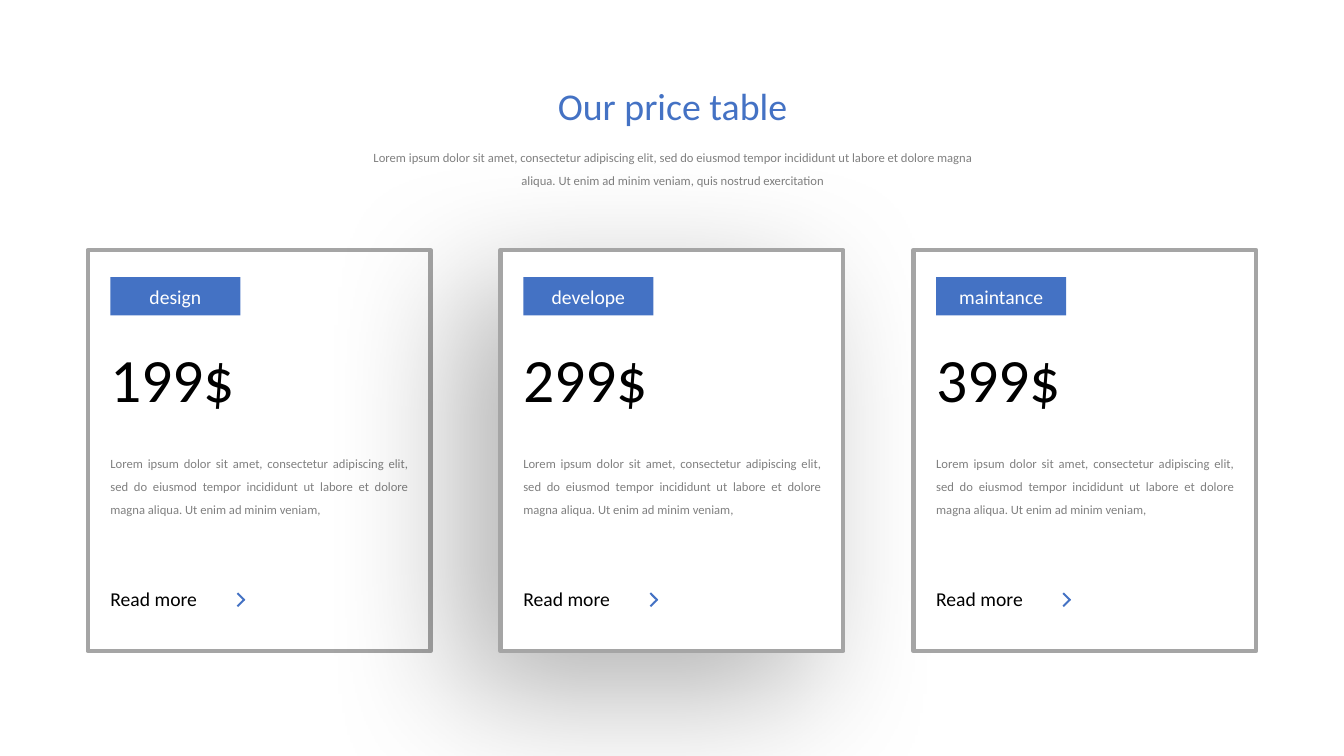
"""Build a price table slide with three framed cards."""
from lxml import etree
from pptx import Presentation
from pptx.dml.color import RGBColor
from pptx.enum.shapes import MSO_SHAPE
from pptx.enum.text import MSO_ANCHOR, PP_ALIGN
from pptx.oxml.ns import qn
from pptx.util import Inches, Pt

RECT = MSO_SHAPE.RECTANGLE
TOP, MIDDLE = MSO_ANCHOR.TOP, MSO_ANCHOR.MIDDLE
LEFT, CENTER, JUSTIFY = PP_ALIGN.LEFT, PP_ALIGN.CENTER, PP_ALIGN.JUSTIFY

TITLE = "Our price table"
LOREM = ("Lorem ipsum dolor sit amet, consectetur adipiscing elit, sed do eiusmod "
         "tempor incididunt ut labore et dolore magna aliqua. Ut enim ad minim veniam,")
INTRO = LOREM + " quis nostrud exercitation"
PLANS = [("design", "199$"), ("develope", "299$"), ("maintance", "399$")]
MORE = "Read more"
FEATURED = 1

BLUE, GRAY, FRAME, WHITE, BLACK = "4472C4", "808080", "A5A5A5", "FFFFFF", "000000"
FONT = "Calibri"
SLIDE_W, SLIDE_H = 13.33, 7.5
MARGIN, CARD_TOP, CARD_W, CARD_H = 0.87, 2.48, 3.4, 3.98
PITCH = (SLIDE_W - 2 * MARGIN - CARD_W) / (len(PLANS) - 1)
PAD = 0.225


def rgb(value):
    return RGBColor.from_string(value)


def box(left, top, width, height):
    return [Inches(v) for v in (left, top, width, height)]


def write(s, text, size, color, align=LEFT, spacing=1.0, anchor=TOP, wrap=True):
    tf = s.text_frame
    tf.word_wrap = wrap
    tf.vertical_anchor = anchor
    tf.margin_left = tf.margin_top = tf.margin_right = tf.margin_bottom = 0
    p = tf.paragraphs[0]
    p.text = text
    p.alignment, p.line_spacing = align, spacing
    p.font.name, p.font.size = FONT, Pt(size)
    p.font.color.rgb = rgb(color)


def add_text(shapes, at, *args, **kwargs):
    write(shapes.add_textbox(*box(*at)), *args, **kwargs)


def add_rect(shapes, at, fill, line=None):
    s = shapes.add_shape(RECT, *box(*at))
    s.shadow.inherit = False
    s.fill.solid()
    s.fill.fore_color.rgb = rgb(fill)
    if line:
        s.line.color.rgb = rgb(line)
        s.line.width = Pt(3)
    else:
        s.line.fill.background()
    return s


def add_shadow(s):
    effects = s._element.spPr.find(qn("a:effectLst"))
    shadow = etree.SubElement(effects, qn("a:outerShdw"), blurRad=str(Pt(100)),
                              dist=str(Pt(40)), dir=str(135 * 60000),
                              algn="tr", rotWithShape="0")
    color = etree.SubElement(shadow, qn("a:srgbClr"), val=BLACK)
    etree.SubElement(color, qn("a:alpha"), val="30000")


def add_card(shapes, left, name, price, featured):
    card = add_rect(shapes, (left, CARD_TOP, CARD_W, CARD_H), WHITE, FRAME)
    if featured:
        add_shadow(card)
    x = left + PAD
    width = CARD_W - 2 * PAD
    tag = add_rect(shapes, (x, 2.75, 1.29, 0.38), BLUE)
    write(tag, name, 14, WHITE, CENTER, anchor=MIDDLE, wrap=False)
    add_text(shapes, (x, 3.38, 1.48, 0.74), price, 44, BLACK, wrap=False)
    add_text(shapes, (x, 4.45, width, 0.88), LOREM, 9, GRAY, JUSTIFY, 1.5)
    add_text(shapes, (x, 5.82, 1.09, 0.24), MORE, 14, BLACK, wrap=False)
    chevron = shapes.add_group_shape()
    for top, angle in ((5.91, 45), (5.97, 135)):
        bar = add_rect(chevron.shapes, (x + 1.245, top, 0.1, 0.02), BLUE)
        bar.rotation = angle


def main():
    prs = Presentation()
    prs.slide_width, prs.slide_height = Inches(SLIDE_W), Inches(SLIDE_H)
    slide = prs.slides.add_slide(prs.slide_layouts[5])
    shapes = slide.shapes
    title = shapes.title
    title.left, title.top, title.width, title.height = box(5.25, 0.82, 2.84, 0.45)
    write(title, TITLE, 27, BLUE, CENTER, wrap=False)
    add_text(shapes, (3.66, 1.41, 6.02, 0.43), INTRO, 9, GRAY, CENTER, 1.5)
    for i, (name, price) in enumerate(PLANS):
        add_card(shapes, MARGIN + i * PITCH, name, price, i == FEATURED)
    prs.save("out.pptx")


if __name__ == "__main__":
    main()
